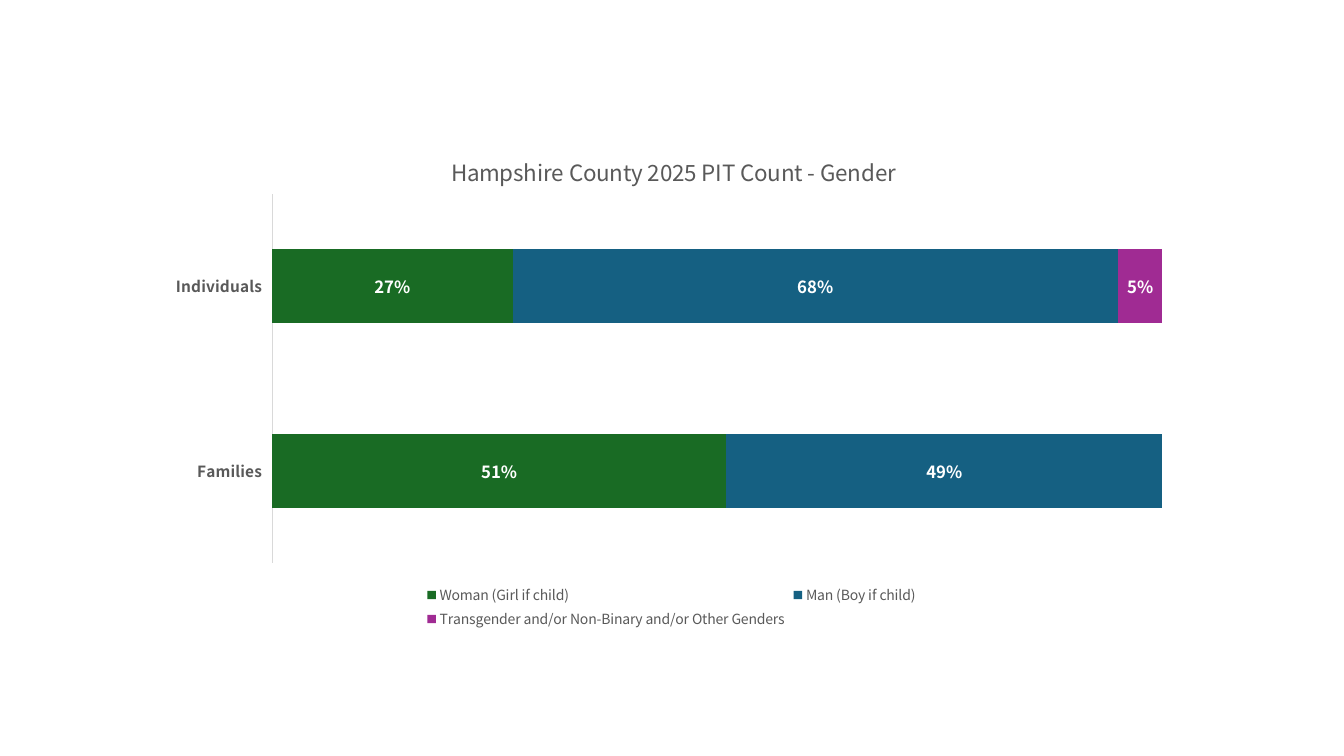
from dataclasses import dataclass

from lxml import etree
from pptx import Presentation
from pptx.chart.data import CategoryChartData
from pptx.dml.color import RGBColor
from pptx.enum.chart import (XL_CHART_TYPE, XL_LABEL_POSITION,
                             XL_LEGEND_POSITION, XL_TICK_LABEL_POSITION,
                             XL_TICK_MARK)
from pptx.oxml.ns import qn
from pptx.util import Inches, Pt

STACKED_BARS = XL_CHART_TYPE.BAR_STACKED_100
CENTER = XL_LABEL_POSITION.CENTER
BOTTOM = XL_LEGEND_POSITION.BOTTOM
NO_TICK = XL_TICK_MARK.NONE
LOW = XL_TICK_LABEL_POSITION.LOW


@dataclass(frozen=True)
class Theme:
    font: str = "Noto Sans CJK SC"
    base_font: str = "Roboto"
    text: str = "595959"
    base_text: str = "000000"
    label: str = "FFFFFF"
    axis: str = "D9D9D9"
    title_size: int = 16
    label_size: int = 12
    category_size: int = 11
    legend_size: int = 10


@dataclass(frozen=True)
class Gender:
    name: str
    shares: tuple[float, ...]
    color: str


THEME = Theme()
TITLE = "Hampshire County 2025 PIT Count - Gender"
HOUSEHOLDS = ("Families", "Individuals")
GENDERS = (
    Gender("Woman (Girl if child)", (0.51, 0.27), "196B24"),
    Gender("Man (Boy if child)", (0.49, 0.68), "156082"),
    Gender("Transgender and/or Non-Binary and/or Other Genders",
           (0, 0.05), "A02B93"),
)


def style_font(font, size: int, color: str = THEME.text,
               bold: bool = False, name: str = THEME.font) -> None:
    font.name = name
    font.size = Pt(size)
    font.bold = bold
    font.color.rgb = RGBColor.from_string(color)


def write_title(chart, text: str, **font_format) -> None:
    chart.has_title = True
    paragraph = chart.chart_title.text_frame.paragraphs[0]
    run = paragraph.add_run()
    run.text = text
    style_font(run.font, **font_format)


def place(element, index: int, **settings) -> None:
    """Give a chart part a manual layout in fractions of the chart."""
    layout = element.find(qn("c:layout"))
    if layout is None:
        layout = etree.Element(qn("c:layout"))
        element.insert(index, layout)
    manual = etree.SubElement(layout, qn("c:manualLayout"))
    for tag, value in settings.items():
        etree.SubElement(manual, qn(f"c:{tag}")).set("val", str(value))


def hide_label(labels, index: int) -> None:
    label = etree.Element(qn("c:dLbl"))
    etree.SubElement(label, qn("c:idx")).set("val", str(index))
    etree.SubElement(label, qn("c:delete")).set("val", "1")
    labels._element.insert(0, label)


def format_series(series, gender: Gender) -> None:
    series.format.fill.solid()
    series.format.fill.fore_color.rgb = RGBColor.from_string(gender.color)
    series.invert_if_negative = False
    labels = series.data_labels
    labels.show_value = True
    labels.number_format = "0%"
    labels.number_format_is_linked = False
    labels.position = CENTER
    style_font(labels.font, THEME.label_size, THEME.label, bold=True)
    for index, share in enumerate(gender.shares):
        if share == 0:
            hide_label(labels, index)


def format_axes(chart) -> None:
    households = chart.category_axis
    households.major_tick_mark = households.minor_tick_mark = NO_TICK
    households.tick_label_position = LOW
    households.format.line.color.rgb = RGBColor.from_string(THEME.axis)
    households.format.line.width = Pt(0.75)
    style_font(households.tick_labels.font, THEME.category_size, bold=True)

    shares = chart.value_axis
    shares.has_major_gridlines = False
    shares.tick_labels.number_format = "0%"
    shares.tick_labels.number_format_is_linked = False
    shares.visible = False


def add_gender_chart(slide) -> None:
    data = CategoryChartData(number_format="0%")
    data.categories = HOUSEHOLDS
    for gender in GENDERS:
        data.add_series(gender.name, gender.shares)
    chart = slide.shapes.add_chart(
        STACKED_BARS, Inches(1.6), Inches(1.23), Inches(10.12), Inches(5.05),
        data).chart
    style_font(chart.font, THEME.legend_size, THEME.base_text,
               name=THEME.base_font)

    # Title and plot area
    write_title(chart, TITLE, size=THEME.title_size)
    place(chart.chart_title._element, 1, xMode="edge", yMode="edge",
          x=0.28, y=0.05)
    place(chart._chartSpace.chart.plotArea, 0, layoutTarget="inner",
          xMode="edge", yMode="edge", x=0.1087, y=0.1375, w=0.8725, h=0.725)

    # Bars and axes
    plot = chart.plots[0]
    plot.gap_width = 150
    plot.overlap = 100
    plot.vary_by_categories = False
    for series, gender in zip(plot.series, GENDERS):
        format_series(series, gender)
    format_axes(chart)

    # Legend
    chart.has_legend = True
    chart.legend.position = BOTTOM
    chart.legend.include_in_layout = False
    style_font(chart.legend.font, THEME.legend_size)


def main() -> None:
    deck = Presentation()
    deck.slide_width = Inches(13.33)
    deck.slide_height = Inches(7.5)
    blank_layout = deck.slide_layouts[6]
    add_gender_chart(deck.slides.add_slide(blank_layout))
    deck.save("out.pptx")


if __name__ == "__main__":
    main()
